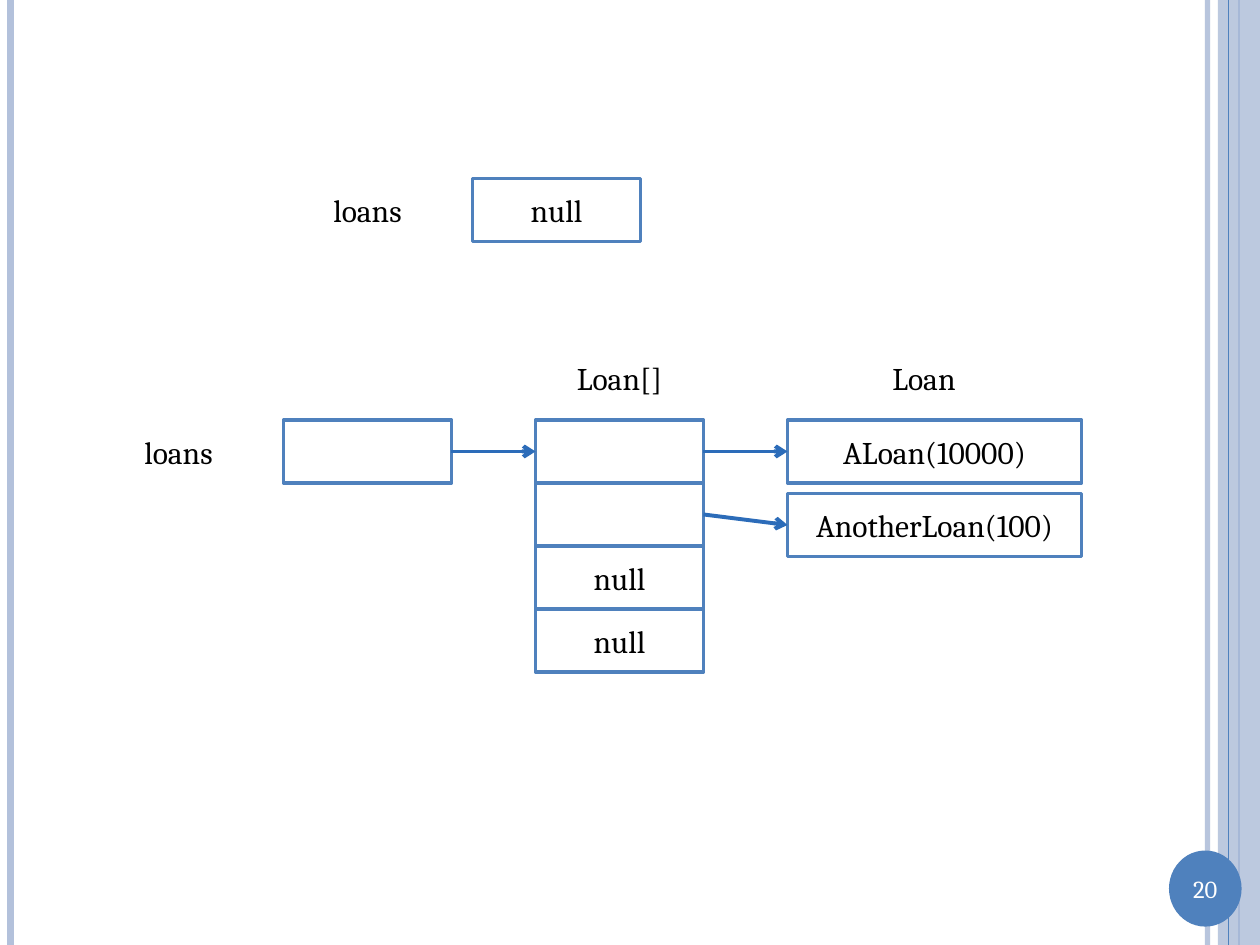
from typing import NamedTuple

from lxml.etree import SubElement
from pptx import Presentation
from pptx.dml.color import RGBColor
from pptx.dml.fill import FillFormat
from pptx.enum.shapes import MSO_CONNECTOR, MSO_SHAPE
from pptx.enum.text import MSO_ANCHOR, PP_ALIGN
from pptx.oxml.ns import qn
from pptx.shapes.autoshape import Shape
from pptx.shapes.connector import Connector
from pptx.slide import Slide
from pptx.util import Pt

FONT = "Cambria"
BLUE, PALE_BLUE, ARROW_BLUE = "4F81BD", "B3C1DB", "2C6CB9"
WHITE, BLACK = "FFFFFF", "000000"
SLIDE_WIDTH, SLIDE_HEIGHT = 720, 540
CELL_WIDTH, CELL_HEIGHT = 96, 36
LOAN_WIDTH = 168
ARRAY_LEFT, LOAN_LEFT = 306, 450
HEADING_TOP, ROW_TOP = 198, 240
RIGHT_SIDE, LEFT_SIDE = 3, 1


class Box(NamedTuple):
    left: float
    top: float
    width: float = CELL_WIDTH
    height: float = CELL_HEIGHT

    def lengths(self) -> list[Pt]:
        return [Pt(value) for value in self]


class Stripe(NamedTuple):
    x: float
    weight: float
    color: str
    opacity: int = 100


def paint(fill: FillFormat, color: str, opacity: int = 100) -> None:
    """Fill with a hex colour; opacity is a percentage."""
    fill.solid()
    fill.fore_color.rgb = RGBColor.from_string(color)
    if opacity < 100:
        rgb = fill._xPr.find(qn("a:solidFill")).find(qn("a:srgbClr"))
        SubElement(rgb, qn("a:alpha"), val=str(opacity * 1000))


def write(shape: Shape, text: str, size: float = 18, color: str = BLACK) -> None:
    """Put centred text in a shape."""
    frame = shape.text_frame
    frame.text = text
    frame.word_wrap = True
    frame.vertical_anchor = MSO_ANCHOR.MIDDLE
    paragraph = frame.paragraphs[0]
    paragraph.alignment = PP_ALIGN.CENTER
    for run in paragraph.runs:
        run.font.name = FONT
        run.font.size = Pt(size)
        paint(run.font.fill, color)


def add_label(slide: Slide, box: Box, text: str, size: float = 18, color: str = BLACK) -> None:
    write(slide.shapes.add_textbox(*box.lengths()), text, size, color)


def add_solid(slide: Slide, preset: MSO_SHAPE, box: Box, color: str, opacity: int = 100) -> Shape:
    """Add a shape with a plain fill, no outline and no shadow."""
    shape = slide.shapes.add_shape(preset, *box.lengths())
    shape.shadow.inherit = False
    paint(shape.fill, color, opacity)
    shape.line.fill.background()
    return shape


def add_cell(slide: Slide, box: Box, text: str = "") -> Shape:
    cell = add_solid(slide, MSO_SHAPE.RECTANGLE, box, WHITE)
    paint(cell.line.fill, BLUE)
    cell.line.width = Pt(2)
    if text:
        write(cell, text)
    return cell


def style_line(line: Connector, weight: float, color: str, opacity: int = 100) -> None:
    line.line.width = Pt(weight)
    paint(line.line.fill, color, opacity)
    SubElement(line._element.spPr, qn("a:effectLst"))


def add_stripe(slide: Slide, stripe: Stripe) -> None:
    line = slide.shapes.add_connector(
        MSO_CONNECTOR.STRAIGHT, Pt(stripe.x), 0, Pt(stripe.x), Pt(SLIDE_HEIGHT))
    style_line(line, stripe.weight, stripe.color, stripe.opacity)


def add_reference(slide: Slide, source: Shape, target: Shape) -> None:
    """Draw an arrow from a cell to the object it refers to."""
    arrow = slide.shapes.add_connector(MSO_CONNECTOR.STRAIGHT, 0, 0, 0, 0)
    arrow.begin_connect(source, RIGHT_SIDE)
    arrow.end_connect(target, LEFT_SIDE)
    style_line(arrow, 2.25, ARROW_BLUE)
    SubElement(arrow.line._get_or_add_ln(), qn("a:tailEnd"), type="arrow")


def add_frame(slide: Slide) -> None:
    """Draw the edge stripes and the slide number badge."""
    for stripe in (Stripe(690, 3, PALE_BLUE, 93), Stripe(6, 4.5, PALE_BLUE),
                   Stripe(708, 1.5, BLUE)):
        add_stripe(slide, stripe)
    band = Box(696, 0, SLIDE_WIDTH - 696, SLIDE_HEIGHT)
    add_solid(slide, MSO_SHAPE.RECTANGLE, band, PALE_BLUE, 87)
    add_stripe(slide, Stripe(702, 0.75, BLUE))
    add_solid(slide, MSO_SHAPE.OVAL, Box(668, 486, 41.5, 43.5), BLUE)
    add_label(slide, Box(668, 495.5, 41.5, 24.5), "20", 14, WHITE)


def add_diagram(slide: Slide) -> None:
    add_label(slide, Box(162, 102), "loans")
    add_cell(slide, Box(270, 102), "null")

    add_label(slide, Box(54, ROW_TOP), "loans")
    variable = add_cell(slide, Box(162, ROW_TOP))
    array = [add_cell(slide, Box(ARRAY_LEFT, ROW_TOP + index * CELL_HEIGHT), text)
             for index, text in enumerate(("", "", "null", "null"))]
    loans = [add_cell(slide, Box(LOAN_LEFT, ROW_TOP + index * 42, LOAN_WIDTH), text)
             for index, text in enumerate(("ALoan(10000)", "AnotherLoan(100)"))]

    add_reference(slide, variable, array[0])
    for element, loan in zip(array, loans):
        add_reference(slide, element, loan)

    add_label(slide, Box(ARRAY_LEFT, HEADING_TOP), "Loan[]")
    add_label(slide, Box(480, HEADING_TOP), "Loan")


def main() -> None:
    presentation = Presentation()
    presentation.slide_width = Pt(SLIDE_WIDTH)
    presentation.slide_height = Pt(SLIDE_HEIGHT)
    slide = presentation.slides.add_slide(presentation.slide_layouts[6])
    add_frame(slide)
    add_diagram(slide)
    presentation.save("out.pptx")


if __name__ == "__main__":
    main()
